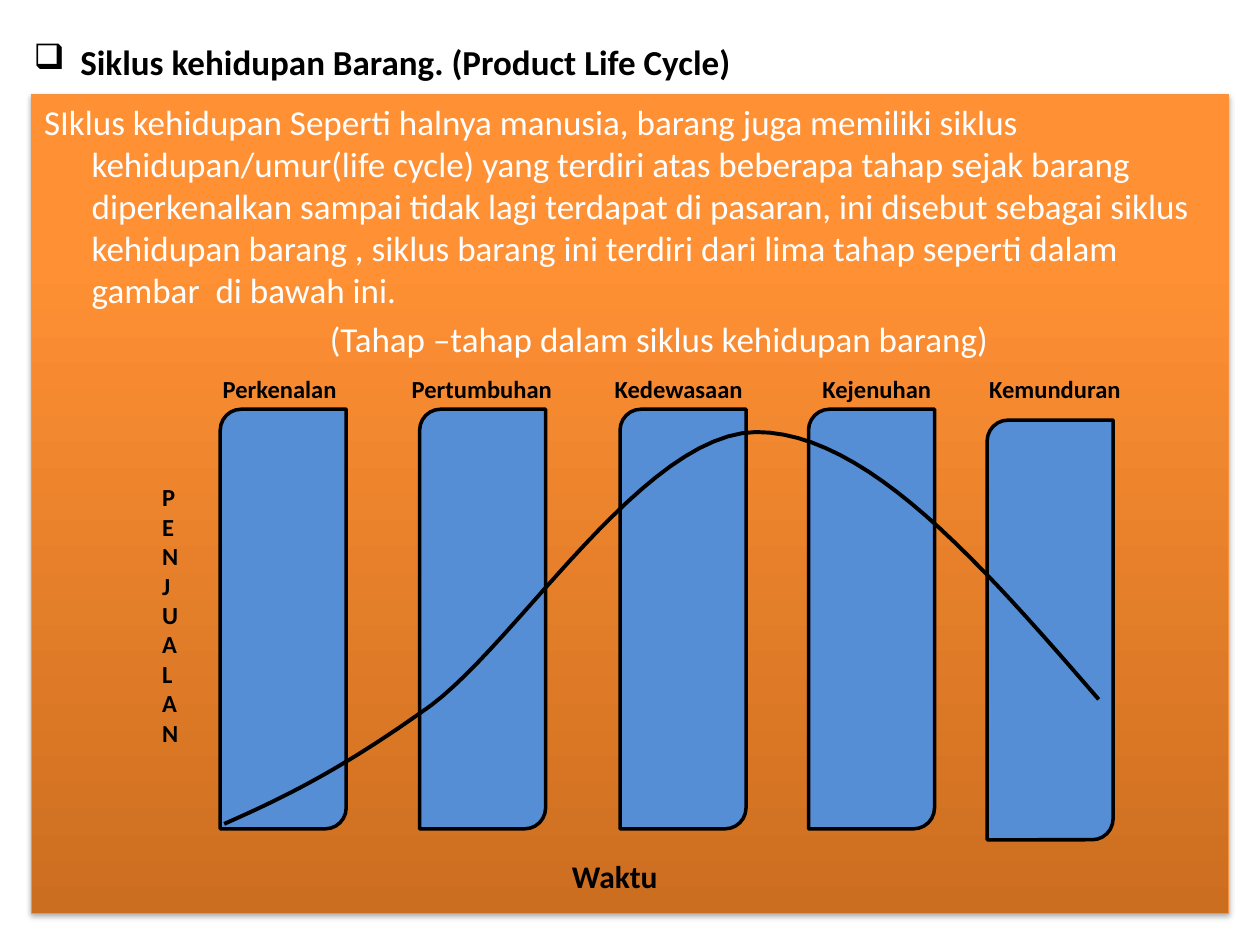
from math import comb

from lxml.etree import SubElement
from pptx import Presentation
from pptx.dml.color import RGBColor
from pptx.enum.shapes import MSO_SHAPE as SHAPE
from pptx.enum.text import MSO_ANCHOR as ANCHOR, PP_ALIGN as ALIGN
from pptx.oxml.ns import qn
from pptx.util import Cm, Pt

BODY = (
    "SIklus kehidupan Seperti halnya manusia, barang juga memiliki siklus "
    "kehidupan/umur(life cycle) yang terdiri atas beberapa tahap sejak barang "
    "diperkenalkan sampai tidak lagi terdapat di pasaran, ini disebut sebagai "
    "siklus kehidupan barang , siklus barang ini terdiri dari lima tahap "
    "seperti dalam gambar  di bawah ini."
)
CAPTION = "(Tahap –tahap dalam siklus kehidupan barang)"
STAGES = [
    ("Perkenalan", 4.44, 8.25, 4.24, 2.82),
    ("Pertumbuhan", 8.46, 8.25, 8.05, 3.35),
    ("Kedewasaan", 12.5, 8.25, 12.14, 3.1),
    ("Kejenuhan", 16.3, 8.25, 16.33, 2.72),
    ("Kemunduran", 19.9, 8.47, 19.69, 3.18),
]
CURVE = [
    (4.52, 16.61), (5.72, 16.08), (6.88, 15.52), (8.69, 14.22), (10.46, 12.9),
    (13, 8.74), (15.24, 8.71), (17.48, 8.71), (19.81, 11.4), (22.15, 14.1),
]


def color(hex_string):
    return RGBColor.from_string(hex_string)


def bezier(ctrl, t):
    weights = [comb(3, i) * t**i * (1 - t) ** (3 - i) for i in range(4)]
    return tuple(
        Cm(sum(w * c[axis] for w, c in zip(weights, ctrl))) for axis in (0, 1)
    )


class SlideBuilder:
    font = "Calibri"
    ink = "000000"
    bar_fill = "558ED5"

    def __init__(self, slide):
        self.s = slide

    def style(self, p, size, hex_string, bold):
        for r in p.runs:
            r.font.name = self.font
            r.font.size = Pt(size)
            r.font.bold = bold
            r.font.color.rgb = color(hex_string)

    def indent(self, p, left, first=0):
        pPr = p._p.get_or_add_pPr()
        pPr.set("marL", str(Cm(left)))
        pPr.set("indent", str(Cm(first)))
        return pPr

    def outline(self, sp, hex_string, width):
        sp.line.color.rgb = color(hex_string)
        sp.line.width = Pt(width)
        sp.shadow.inherit = False

    def label(self, text, x, y, w, h, size=14):
        tf = self.s.shapes.add_textbox(Cm(x), Cm(y), Cm(w), Cm(h)).text_frame
        tf.word_wrap = False
        tf.text = text
        for p in tf.paragraphs:
            self.style(p, size, self.ink, True)
        return tf

    def title(self, text, x, y, w, h):
        tf = self.label(text, x, y, w, h, 20)
        tf.word_wrap = True
        tf.vertical_anchor = ANCHOR.MIDDLE
        pPr = self.indent(tf.paragraphs[0], 0.94, -0.94)
        SubElement(pPr, qn("a:buChar")).set("char", "❑")

    def panel(self, paragraphs, x, y, w, h):
        sp = self.s.shapes.add_shape(SHAPE.RECTANGLE, Cm(x), Cm(y), Cm(w), Cm(h))
        sp.fill.gradient()
        sp.fill.gradient_angle = 90
        for stop, (pos, hex_string) in zip(
            sp.fill.gradient_stops, [(0, "CC6E20"), (0.8, "FF9034")]
        ):
            stop.position = pos
            stop.color.rgb = color(hex_string)
        self.outline(sp, "F69240", 0.75)
        self.drop_shadow(sp)
        tf = sp.text_frame
        tf.word_wrap = True
        tf.vertical_anchor = ANCHOR.TOP
        tf.text = "\n".join(text for text, _, _ in paragraphs)
        for p, (_, left, first) in zip(tf.paragraphs, paragraphs):
            p.alignment = ALIGN.LEFT
            p.space_before = Pt(4)
            self.indent(p, left, first)
            self.style(p, 20, "FFFFFF", False)

    def drop_shadow(self, sp):
        effects = sp._element.spPr.find(qn("a:effectLst"))
        shadow = SubElement(
            effects, qn("a:outerShdw"), blurRad=str(Pt(3.1)), dist=str(Pt(1.8)),
            dir="5400000", rotWithShape="0",
        )
        clr = SubElement(shadow, qn("a:srgbClr"), val="000000")
        SubElement(clr, qn("a:alpha"), val="35000")

    def bar(self, x, y, w, h):
        sp = self.s.shapes.add_shape(
            SHAPE.ROUND_2_DIAG_RECTANGLE, Cm(x), Cm(y), Cm(w), Cm(h)
        )
        sp.fill.solid()
        sp.fill.fore_color.rgb = color(self.bar_fill)
        self.outline(sp, self.ink, 2)

    def curve(self, ctrl, steps=24):
        points = [
            bezier(ctrl[i:i + 4], n / steps)
            for i in range(0, len(ctrl) - 1, 3)
            for n in range(1, steps + 1)
        ]
        builder = self.s.shapes.build_freeform(*bezier(ctrl[:4], 0))
        builder.add_line_segments(points, close=False)
        sp = builder.convert_to_shape()
        sp.fill.background()
        self.outline(sp, self.ink, 2.25)


def main():
    prs = Presentation()
    prs.slide_width, prs.slide_height = Cm(25.4), Cm(19.05)
    b = SlideBuilder(prs.slides.add_slide(prs.slide_layouts[6]))
    b.title("Siklus kehidupan Barang. (Product Life Cycle)", 0.43, 0.76, 24.56, 0.94)
    b.panel([(BODY, 0.96, -0.96), (CAPTION, 5.76, 0)], 0.64, 1.9, 24.13, 16.51)
    for name, x, y, label_x, label_w in STAGES:
        b.bar(x, y, 2.54, 8.46)
        b.label(name, label_x, 7.41, label_w, 0.86)
    b.label("Waktu", 11.28, 17.15, 2.26, 1.02, 18)
    b.label("\n".join("PENJUALAN"), 3.02, 9.6, 0.84, 5.64)
    b.curve(CURVE)
    prs.save("out.pptx")


if __name__ == "__main__":
    main()
